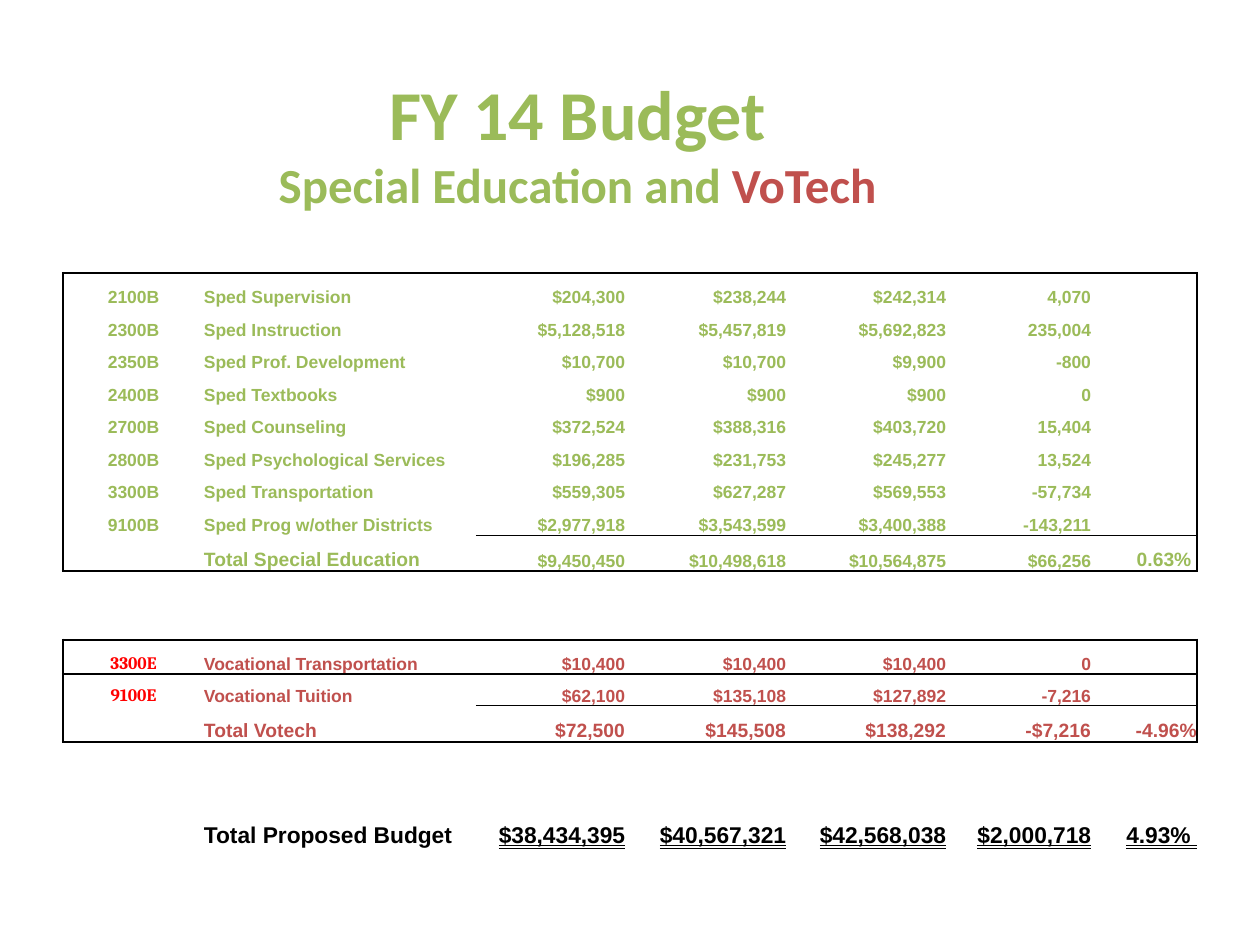
from lxml import etree
from pptx import Presentation
from pptx.dml.color import RGBColor
from pptx.enum.text import MSO_ANCHOR, MSO_AUTO_SIZE, MSO_UNDERLINE, PP_ALIGN
from pptx.oxml.ns import qn
from pptx.util import Emu, Pt

CENTER, LEFT, RIGHT = PP_ALIGN.CENTER, PP_ALIGN.LEFT, PP_ALIGN.RIGHT
BOTTOM, MIDDLE = MSO_ANCHOR.BOTTOM, MSO_ANCHOR.MIDDLE
NO_AUTOFIT = MSO_AUTO_SIZE.NONE
DOUBLE = MSO_UNDERLINE.DOUBLE_LINE

PX_PER_INCH = 126
SLIDE_W, SLIDE_H = 1260, 945
TITLE_BOX = (210, 63, 735, 157)
BUDGET_BOX = (63, 273, 1134, 577)

GREEN, BRICK, RED, BLACK = "9BBB59", "C0504D", "FF0000", "000000"
PLAIN_STYLE = "{2D5ABB26-0587-4C30-8999-92F81FD0307C}"  # no style, no grid
FRAME, RULE = 1.5, 0.5  # border widths in points

COLUMN_WIDTHS = [141, 272, 149, 161, 160, 145, 106]
COLUMN_ALIGNS = [CENTER, LEFT] + [RIGHT] * 5
ROW_HEIGHTS = [34, 33, 32, 33, 32, 33, 32, 33, 36, 34, 35, 34, 32, 36, 35, 33, 39]
FIRST_AMOUNT = 2

SPECIAL_EDUCATION = [
    ["2100B", "Sped Supervision", "$204,300", "$238,244", "$242,314", "4,070", ""],
    ["2300B", "Sped Instruction", "$5,128,518", "$5,457,819", "$5,692,823", "235,004", ""],
    ["2350B", "Sped Prof. Development", "$10,700", "$10,700", "$9,900", "-800", ""],
    ["2400B", "Sped Textbooks", "$900", "$900", "$900", "0", ""],
    ["2700B", "Sped Counseling", "$372,524", "$388,316", "$403,720", "15,404", ""],
    ["2800B", "Sped Psychological Services", "$196,285", "$231,753", "$245,277", "13,524", ""],
    ["3300B", "Sped Transportation", "$559,305", "$627,287", "$569,553", "-57,734", ""],
    ["9100B", "Sped Prog w/other Districts", "$2,977,918", "$3,543,599", "$3,400,388",
     "-143,211", ""],
    ["", "Total Special Education", "$9,450,450", "$10,498,618", "$10,564,875", "$66,256",
     "0.63% "],
]
VOTECH = [
    ["3300E", "Vocational Transportation", "$10,400", "$10,400", "$10,400", "0", ""],
    ["9100E", "Vocational Tuition", "$62,100", "$135,108", "$127,892", "-7,216", ""],
    ["", "Total Votech", "$72,500", "$145,508", "$138,292", "-$7,216", "-4.96%"],
]
PROPOSED_TOTAL = ["", "Total Proposed Budget", "$38,434,395", "$40,567,321", "$42,568,038",
                  "$2,000,718", "4.93% "]
VOTECH_ROW, PROPOSED_ROW = 11, 16


def px(length):
    return Emu(round(length * 914400 / PX_PER_INCH))


def rgb(hex_color):
    return RGBColor.from_string(hex_color)


def set_font(font, size, color, name="Arial"):
    font.name, font.size, font.bold = name, Pt(size), True
    font.color.rgb = rgb(color)


def set_borders(cell, widths):
    """Draw black borders; widths maps the sides L, R, T, B to points."""
    properties = cell._tc.get_or_add_tcPr()
    sides = [side for side in "LRTB" if side in widths]
    for position, side in enumerate(sides):
        line = etree.Element(qn(f"a:ln{side}"), w=str(Pt(widths[side])))
        fill = etree.SubElement(line, qn("a:solidFill"))
        etree.SubElement(fill, qn("a:srgbClr"), val=BLACK)
        properties.insert(position, line)


def write_cell(cell, text, align, size=10, color=BLACK, name="Arial"):
    paragraph = cell.text_frame.paragraphs[0]
    paragraph.alignment = align
    set_font(paragraph.font, size, color, name)
    if text:
        paragraph.add_run().text = text
    return paragraph


def fill_section(table, first_row, section, color, code_style, total_sizes):
    """Write a framed group of accounts whose last row is its total."""
    last = len(section) - 1
    for r, values in enumerate(section):
        for c, text in enumerate(values):
            cell = table.cell(first_row + r, c)
            style = {"color": color}
            if r == last:
                style["size"] = total_sizes[c]
            elif c == 0:
                style.update(code_style)
            write_cell(cell, text, COLUMN_ALIGNS[c], **style)

            borders = {}
            if c == 0:
                borders["L"] = FRAME
            if c == len(values) - 1:
                borders["R"] = FRAME
            if r == 0:
                borders["T"] = FRAME
            if r == last:
                borders["B"] = FRAME
            if c >= FIRST_AMOUNT and r == last - 1:
                borders["B"] = RULE
            if c >= FIRST_AMOUNT and r == last:
                borders["T"] = RULE
            set_borders(cell, borders)


def add_title(slide, box):
    title = slide.shapes.title
    title.left, title.top, title.width, title.height = map(px, box)
    frame = title.text_frame
    frame.word_wrap, frame.auto_size, frame.vertical_anchor = True, NO_AUTOFIT, MIDDLE
    heading, subheading = frame.paragraphs[0], frame.add_paragraph()
    heading.alignment = subheading.alignment = CENTER

    heading.add_run().text = "FY 14 Budget"
    set_font(heading.font, 40, GREEN, "Calibri")
    for text, color in [("Special Education and ", GREEN), ("VoTech", BRICK)]:
        run = subheading.add_run()
        run.text = text
        set_font(run.font, 28, color, "Calibri")


def add_budget(slide, box):
    table = slide.shapes.add_table(
        len(ROW_HEIGHTS), len(COLUMN_WIDTHS), *map(px, box)).table
    table.first_row = table.horz_banding = False
    table._tbl.tblPr.find(qn("a:tableStyleId")).text = PLAIN_STYLE
    for column, width in zip(table.columns, COLUMN_WIDTHS):
        column.width = px(width)
    for row, height in zip(table.rows, ROW_HEIGHTS):
        row.height = px(height)
    for cell in table.iter_cells():
        cell.fill.background()
        cell.vertical_anchor = BOTTOM
        cell.margin_left = cell.margin_right = cell.margin_top = cell.margin_bottom = 0

    # Account groups
    fill_section(table, 0, SPECIAL_EDUCATION, GREEN, {},
                 [10, 11, 10, 10, 10, 10, 11])
    fill_section(table, VOTECH_ROW, VOTECH, BRICK,
                 {"color": RED, "name": "Cambria"}, [11] * 7)

    # Spacer rows keep small type so that they do not grow
    section_end = VOTECH_ROW + len(VOTECH)
    spacers = [*range(len(SPECIAL_EDUCATION), VOTECH_ROW), *range(section_end, PROPOSED_ROW)]
    for r in spacers:
        for c, align in enumerate(COLUMN_ALIGNS):
            write_cell(table.cell(r, c), "", align)

    # Grand total
    for c, text in enumerate(PROPOSED_TOTAL):
        paragraph = write_cell(table.cell(PROPOSED_ROW, c), text, COLUMN_ALIGNS[c], 13)
        if c >= FIRST_AMOUNT:
            paragraph.font.underline = DOUBLE


def main():
    deck = Presentation()
    deck.slide_width, deck.slide_height = px(SLIDE_W), px(SLIDE_H)
    slide = deck.slides.add_slide(deck.slide_layouts[5])  # title only
    add_budget(slide, BUDGET_BOX)
    add_title(slide, TITLE_BOX)
    deck.save("out.pptx")


if __name__ == "__main__":
    main()
